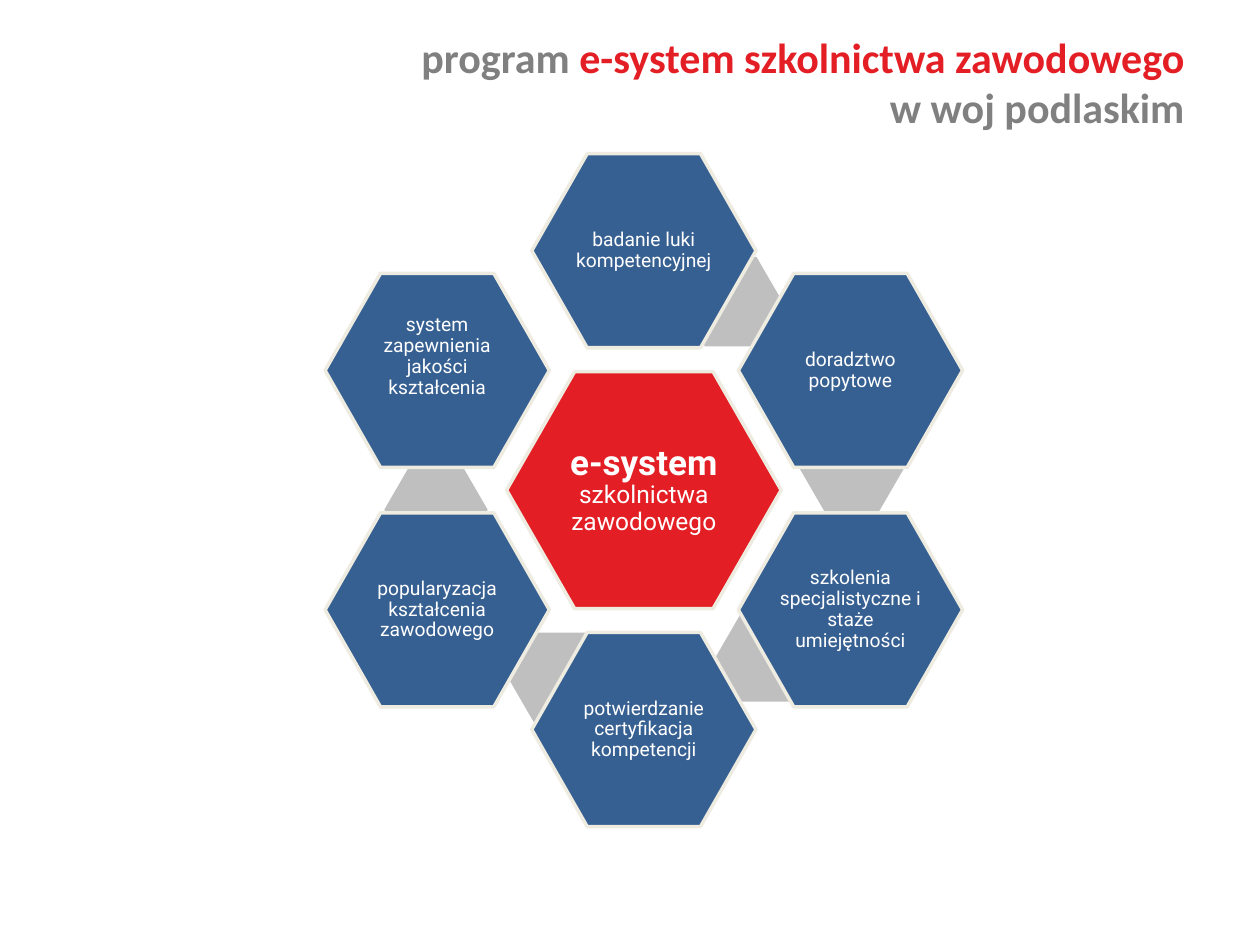
"""Build a slide with a ring of six programme parts around the e-system core."""
from pptx import Presentation
from pptx.dml.color import RGBColor
from pptx.enum.shapes import MSO_SHAPE
from pptx.enum.text import MSO_ANCHOR, PP_ALIGN
from pptx.util import Inches, Pt

HEXAGON = MSO_SHAPE.HEXAGON
MIDDLE, TOP = MSO_ANCHOR.MIDDLE, MSO_ANCHOR.TOP
CENTER, RIGHT = PP_ALIGN.CENTER, PP_ALIGN.RIGHT

COLORS = {"red": "E31E24", "blue": "376092", "link": "BFBFBF",
          "edge": "EEECE1", "gray": "808080", "white": "FFFFFF"}
TITLE = [
    [("program", "gray"), (" e-system szkolnictwa zawodowego", "red")],
    [("w woj podlaskim", "gray")],
]
CORE = [("e-system", 20, True), (" szkolnictwa zawodowego", 14, False)]
PARTS = [
    ("badanie luki kompetencyjnej", 0, -2, 0),
    ("doradztwo popytowe", 1, -1, 0),
    ("szkolenia specjalistyczne i staże umiejętności", 1, 1, 0),
    ("potwierdzanie certyfikacja kompetencji", 0, 2, 0),
    ("popularyzacja kształcenia zawodowego", -1, 1, 0),
    ("system zapewnienia jakości kształcenia", -1, -1, 0.22),
]
LINKS = [(5.39, 2.04), (6.35, 3.37), (5.68, 4.86), (4.03, 5.02), (3.05, 3.69)]
MID_X, MID_Y = 5.11, 3.89
STEP_X, STEP_Y = 1.64, 0.95
CORE_SIZE = (2.18, 1.88, 0.54)
PART_SIZE = (1.78, 1.54, 0.44)


def rgb(name):
    return RGBColor.from_string(COLORS[name])


def style(run, size, color, font, bold):
    run.font.size = Pt(size)
    run.font.name = font
    run.font.bold = bold
    run.font.color.rgb = rgb(color)


def add_hex(slide, x, y, size, color, runs, pads, lift=0):
    wide, high, cut = size
    left, right = x - wide / 2, x + wide / 2
    top, base = y - high / 2, y + high / 2
    points = [(left + cut, top), (right - cut, top), (right, y),
              (right - cut, base), (left + cut, base)]
    pen = slide.shapes.build_freeform(Inches(left), Inches(y))
    pen.add_line_segments([(Inches(a), Inches(b)) for a, b in points])
    shape = pen.convert_to_shape()
    shape.shadow.inherit = False
    shape.fill.solid()
    shape.fill.fore_color.rgb = rgb(color)
    shape.line.color.rgb = rgb("edge")
    shape.line.width = Pt(2)
    frame = shape.text_frame
    frame.word_wrap = True
    frame.vertical_anchor = MIDDLE
    frame.margin_left = frame.margin_right = Inches(pads[0])
    frame.margin_top = Inches(pads[1])
    frame.margin_bottom = Inches(pads[1] + lift)
    para = frame.paragraphs[0]
    para.alignment = CENTER
    para.line_spacing = 0.9
    for text, points, bold in runs:
        run = para.add_run()
        run.text = text
        style(run, points, "white", "Roboto", bold)


def add_link(slide, left, top):
    shape = slide.shapes.add_shape(
        HEXAGON, Inches(left), Inches(top), Inches(0.82), Inches(0.71))
    shape.adjustments[0] = 0.289
    shape.shadow.inherit = False
    shape.fill.solid()
    shape.fill.fore_color.rgb = rgb("link")
    shape.line.fill.background()


def add_title(slide):
    box = slide.shapes.add_textbox(
        Inches(0.5), Inches(0.2), Inches(9), Inches(1.25))
    frame = box.text_frame
    frame.word_wrap = True
    frame.vertical_anchor = TOP
    for i, line in enumerate(TITLE):
        para = frame.add_paragraph() if i else frame.paragraphs[0]
        para.alignment = RIGHT
        for text, color in line:
            run = para.add_run()
            run.text = text
            style(run, 24, color, "Calibri", True)


def main():
    deck = Presentation()
    deck.slide_width, deck.slide_height = Inches(10), Inches(7.5)
    slide = deck.slides.add_slide(deck.slide_layouts[6])
    add_hex(slide, MID_X, MID_Y, CORE_SIZE, "red", CORE, (0.39, 0.34))
    for i, (text, col, row, lift) in enumerate(PARTS):
        if i < len(LINKS):
            add_link(slide, *LINKS[i])
        add_hex(slide, MID_X + col * STEP_X, MID_Y + row * STEP_Y,
                PART_SIZE, "blue", [(text, 11, False)], (0.31, 0.27), lift)
    add_title(slide)
    deck.save("out.pptx")


if __name__ == "__main__":
    main()
